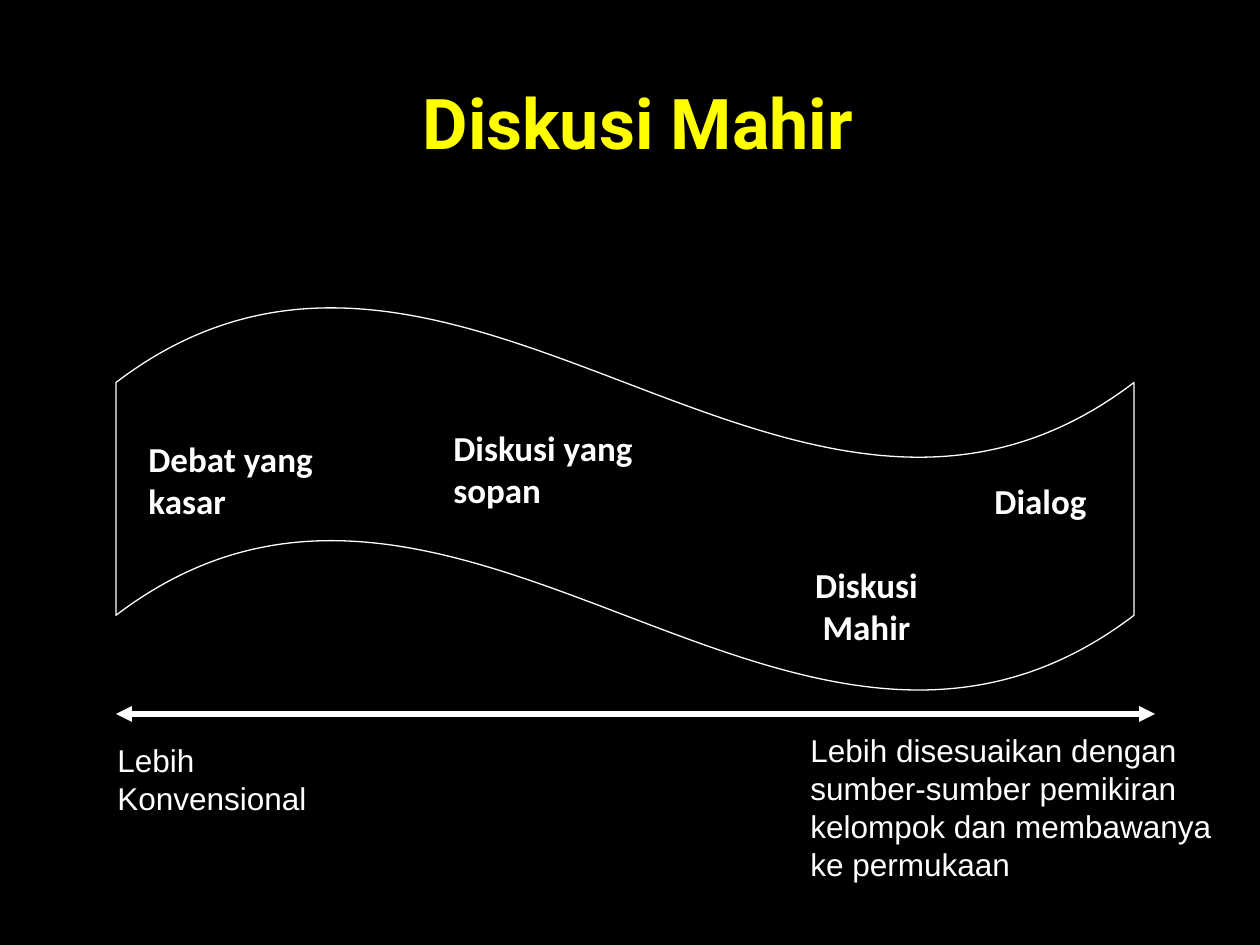
from lxml import etree
from pptx import Presentation
from pptx.dml.color import RGBColor
from pptx.enum.shapes import MSO_CONNECTOR, MSO_SHAPE
from pptx.enum.text import MSO_ANCHOR, MSO_AUTO_SIZE, PP_ALIGN
from pptx.oxml.ns import qn
from pptx.util import Emu, Pt

STRAIGHT = MSO_CONNECTOR.STRAIGHT
WAVE = MSO_SHAPE.WAVE
TOP = MSO_ANCHOR.TOP
NO_FIT = MSO_AUTO_SIZE.NONE
LEFT = PP_ALIGN.LEFT
CENTER = PP_ALIGN.CENTER

EMU_PER_PX = 914400 / 126
COLORS = {"background": "000000", "white": "FFFFFF", "title": "FFFF00"}


def px(length):
    return Emu(round(length * EMU_PER_PX))


def color(name):
    return RGBColor.from_string(COLORS[name])


def write_text(frame, text, *, size, font, fill="white", bold=False, align=LEFT):
    frame.word_wrap = True
    frame.auto_size = NO_FIT
    frame.vertical_anchor = TOP
    for index, line in enumerate(text.split("\n")):
        para = frame.paragraphs[0] if index == 0 else frame.add_paragraph()
        para.alignment = align
        span = para.add_run()
        span.text = line
        span.font.size = Pt(size)
        span.font.name = font
        span.font.bold = bold
        span.font.color.rgb = color(fill)


class SlideBuilder:
    stage_style = {"size": 20, "font": "Calibri", "bold": True}
    caption_style = {"size": 18, "font": "Arial"}
    title_style = {"size": 40, "font": "Roboto", "bold": True, "fill": "title"}

    def __init__(self, deck):
        self.page = deck.slides.add_slide(deck.slide_layouts[5])
        background = self.page.background.fill
        background.solid()
        background.fore_color.rgb = color("background")

    def title(self, text, left, top, width, height):
        box = self.page.shapes.title
        box.left, box.top, box.width, box.height = map(px, (left, top, width, height))
        write_text(box.text_frame, text, **self.title_style)

    def text(self, text, left, top, width, height, **style):
        box = self.page.shapes.add_textbox(*map(px, (left, top, width, height)))
        write_text(box.text_frame, text, **style)

    def wave(self, left, top, width, height, depth):
        shape = self.page.shapes.add_shape(WAVE, *map(px, (left, top, width, height)))
        shape.adjustments[0] = depth
        shape.adjustments[1] = 0
        shape.shadow.inherit = False
        shape.fill.background()
        shape.line.color.rgb = color("white")
        shape.line.width = Pt(0.75)

    def double_arrow(self, start, end, y):
        arrow = self.page.shapes.add_connector(STRAIGHT, px(start), px(y), px(end), px(y))
        arrow.line.color.rgb = color("white")
        arrow.line.width = Pt(3)
        outline = arrow.line._get_or_add_ln()
        for tag in ("a:headEnd", "a:tailEnd"):
            etree.SubElement(outline, qn(tag), type="triangle")
        etree.SubElement(arrow._element.spPr, qn("a:effectLst"))


def main():
    deck = Presentation()
    deck.slide_width, deck.slide_height = px(1260), px(945)
    slide = SlideBuilder(deck)
    slide.title("Diskusi Mahir", 410, 73, 525, 97)
    slide.wave(116, 305, 1018, 388, 0.206)

    stages = [
        ("Debat yang kasar", 136, 431, 242, 97, LEFT),
        ("Diskusi yang sopan", 441, 420, 242, 97, LEFT),
        ("Diskusi Mahir", 788, 557, 157, 97, CENTER),
        ("Dialog", 968, 473, 145, 54, CENTER),
    ]
    for *placement, align in stages:
        slide.text(*placement, align=align, **slide.stage_style)

    slide.double_arrow(116, 1155, 714)
    captions = [
        ("Lebih\nKonvensional", 105, 735, 273, 88),
        ("Lebih disesuaikan dengan sumber-sumber pemikiran kelompok dan membawanya ke permukaan",
         798, 725, 462, 164),
    ]
    for placement in captions:
        slide.text(*placement, **slide.caption_style)
    deck.save("out.pptx")


if __name__ == "__main__":
    main()
